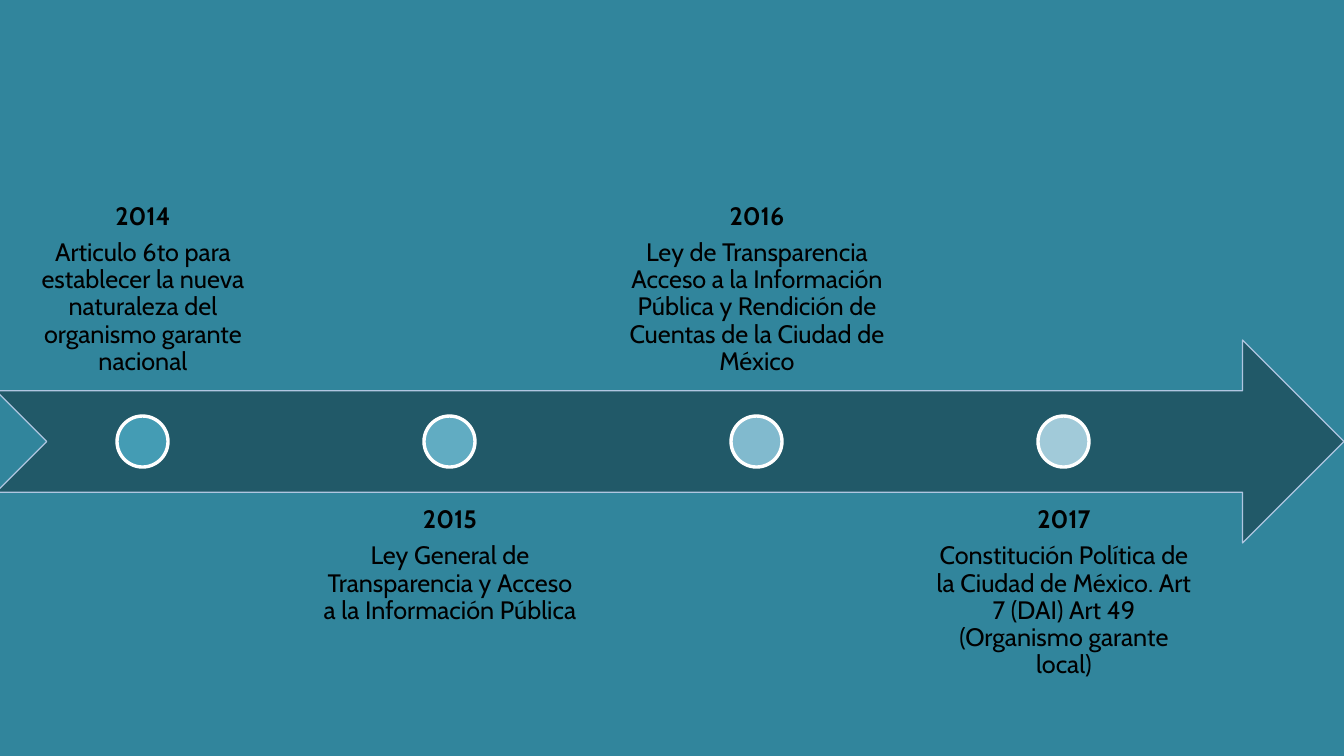
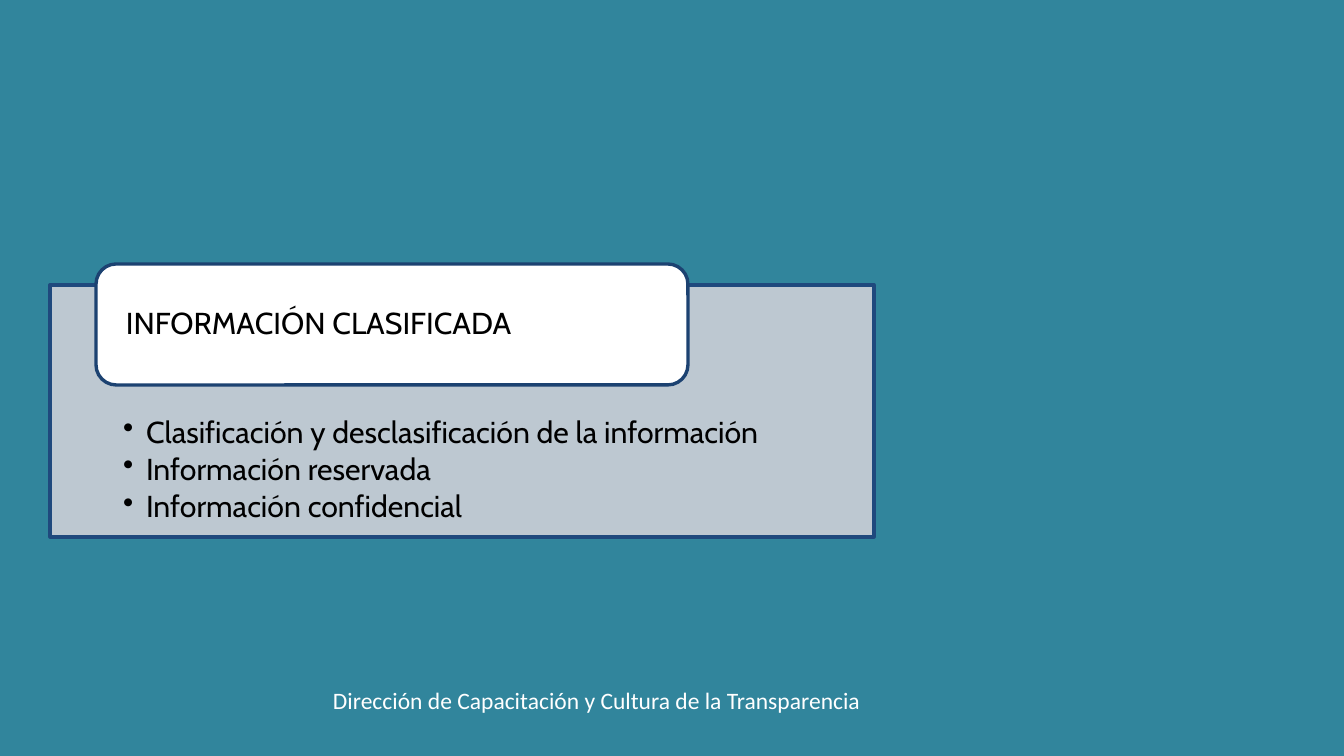
import pptx
import pptx.dml.color
import pptx.enum.shapes
import pptx.enum.text
import pptx.oxml
import pptx.oxml.ns
import pptx.util
import lxml.etree

EMU_PER_PX = 7557
SHAPES = pptx.enum.shapes.MSO_SHAPE
ANCHORS = pptx.enum.text.MSO_ANCHOR
ALIGN = pptx.enum.text.PP_ALIGN
BACKGROUND = "31859C"
BLACK = "000000"
WHITE = "FFFFFF"


def rgb(value):
    return pptx.dml.color.RGBColor.from_string(value)


def write(shape, lines, size, font="Cabin", color=BLACK, align=ALIGN.LEFT,
          anchor=ANCHORS.TOP, insets=(0, 0, 0, 0), spacing=0.9, after=0,
          bold_first=False, bullet_indent=0):
    frame = shape.text_frame
    frame.word_wrap = True
    frame.vertical_anchor = anchor
    (frame.margin_left, frame.margin_top,
     frame.margin_right, frame.margin_bottom) = [n * EMU_PER_PX for n in insets]
    for index, line in enumerate(lines):
        paragraph = frame.add_paragraph() if index else frame.paragraphs[0]
        paragraph.text = line
        paragraph.alignment = align
        paragraph.line_spacing = spacing
        paragraph.space_after = pptx.util.Pt(after)
        if bullet_indent:
            properties = paragraph._p.get_or_add_pPr()
            properties.set("marL", str(bullet_indent * EMU_PER_PX))
            properties.set("indent", str(-bullet_indent * EMU_PER_PX))
            bullet = lxml.etree.SubElement(properties, pptx.oxml.ns.qn("a:buChar"))
            bullet.set("char", "•")
        paragraph.font.name = font
        paragraph.font.size = pptx.util.Pt(size)
        paragraph.font.color.rgb = rgb(color)
        paragraph.font.bold = bold_first and index == 0


def draw(slide, preset, box, fill, line, weight):
    shape = slide.shapes.add_shape(preset, *[n * EMU_PER_PX for n in box])
    shape.shadow.inherit = False
    shape.fill.solid()
    shape.fill.fore_color.rgb = rgb(fill)
    shape.line.color.rgb = rgb(line)
    shape.line.width = pptx.util.Pt(weight)
    return shape


deck = pptx.Presentation()
deck.slide_width = 1344 * EMU_PER_PX
deck.slide_height = 756 * EMU_PER_PX
timeline, classified = [deck.slides.add_slide(deck.slide_layouts[6]) for _ in range(2)]
for slide in (timeline, classified):
    slide.background.fill.solid()
    slide.background.fill.fore_color.rgb = rgb(BACKGROUND)

draw(timeline, SHAPES.NOTCHED_RIGHT_ARROW, (-4, 340, 1348, 203), "215968", "B0C6E1", 0.75)

milestones = [
    ("2014", "Articulo 6to para establecer la nueva naturaleza del organismo garante nacional", "449CB4"),
    ("2015", "Ley General de Transparencia y Acceso a la Información Pública", "61ACC2"),
    ("2016", "Ley de Transparencia Acceso a la Información Pública y Rendición de Cuentas de la Ciudad de México", "81BACE"),
    ("2017", "Constitución Política de la Ciudad de México. Art 7 (DAI) Art 49 (Organismo garante local)", "A1CAD9"),
]
MILESTONE_STEP = 307
for index, (year, event, dot_color) in enumerate(milestones):
    offset = index * MILESTONE_STEP
    above = index % 2 == 0
    label = timeline.shapes.add_textbox(
        *[n * EMU_PER_PX for n in (offset - 3, 188 if above else 492, 292, 203)])
    write(label, [year, event], 15, align=ALIGN.CENTER,
          anchor=ANCHORS.BOTTOM if above else ANCHORS.TOP,
          insets=(15, 15, 15, 15), after=5.25, bold_first=True)
    draw(timeline, SHAPES.OVAL, (offset + 117, 416, 51, 51), dot_color, WHITE, 2)

footer = classified.shapes.add_textbox(*[n * EMU_PER_PX for n in (321, 680, 711, 41)])
write(footer, ["Dirección de Capacitación y Cultura de la Transparencia"], 14,
      font="Calibri", color=WHITE, insets=(12, 6, 12, 6), spacing=1.0)

topics = draw(classified, SHAPES.RECTANGLE, (50, 285, 824, 252), "CDD0D7", "1F497D", 2)
topics_color = topics.fill._xPr.find(".//" + pptx.oxml.ns.qn("a:srgbClr"))
lxml.etree.SubElement(topics_color, pptx.oxml.ns.qn("a:alpha")).set("val", "90000")
write(topics, ["Clasificación y desclasificación de la información",
               "Información reservada", "Información confidencial"], 18,
      insets=(73, 132, 73, 17), after=2.7, bullet_indent=23)

heading = draw(classified, SHAPES.ROUNDED_RECTANGLE, (96, 264, 592, 121), WHITE, "1C4271", 2)
write(heading, ["INFORMACIÓN CLASIFICADA"], 18, anchor=ANCHORS.MIDDLE, insets=(24, 0, 24, 0))

deck.save("out.pptx")
